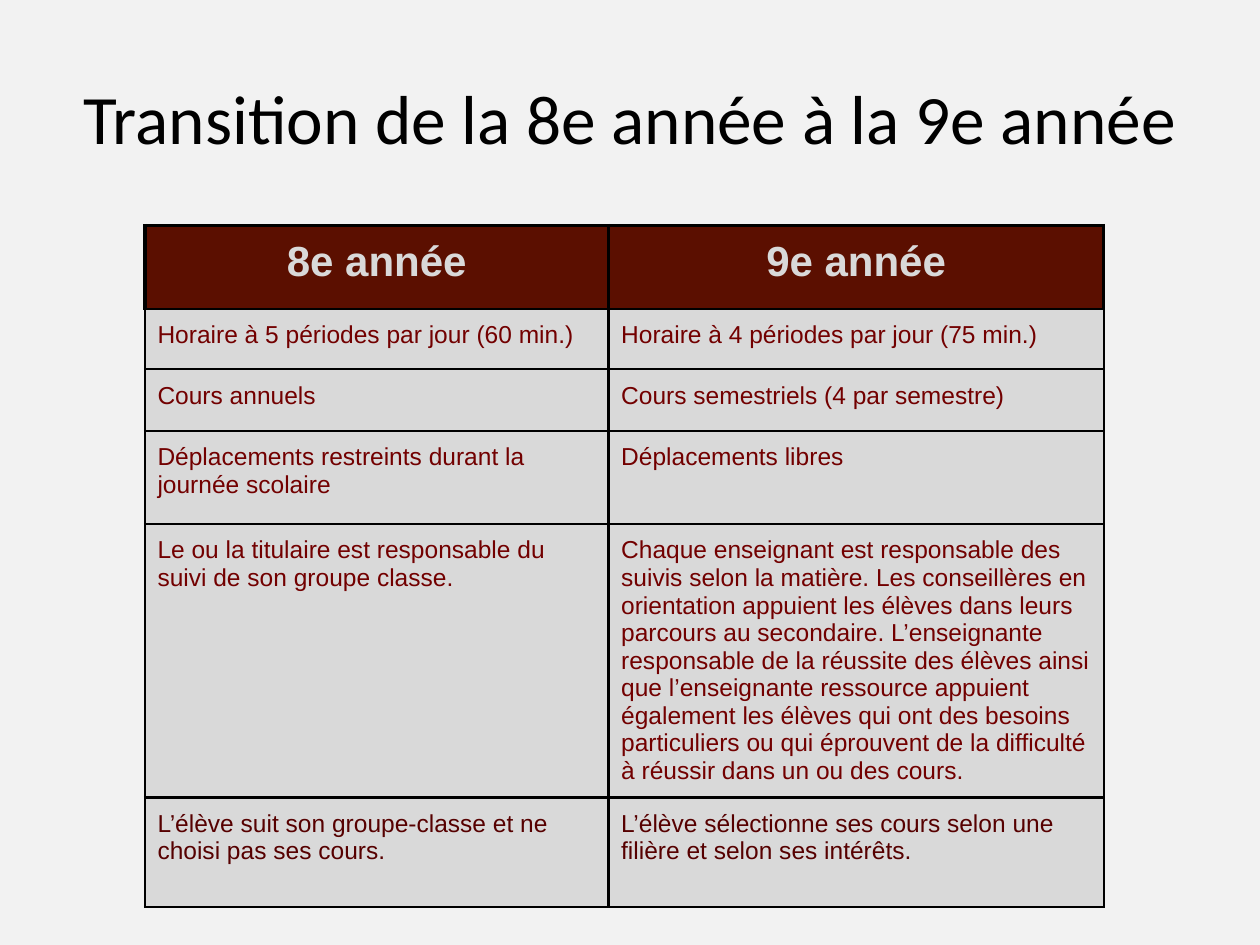
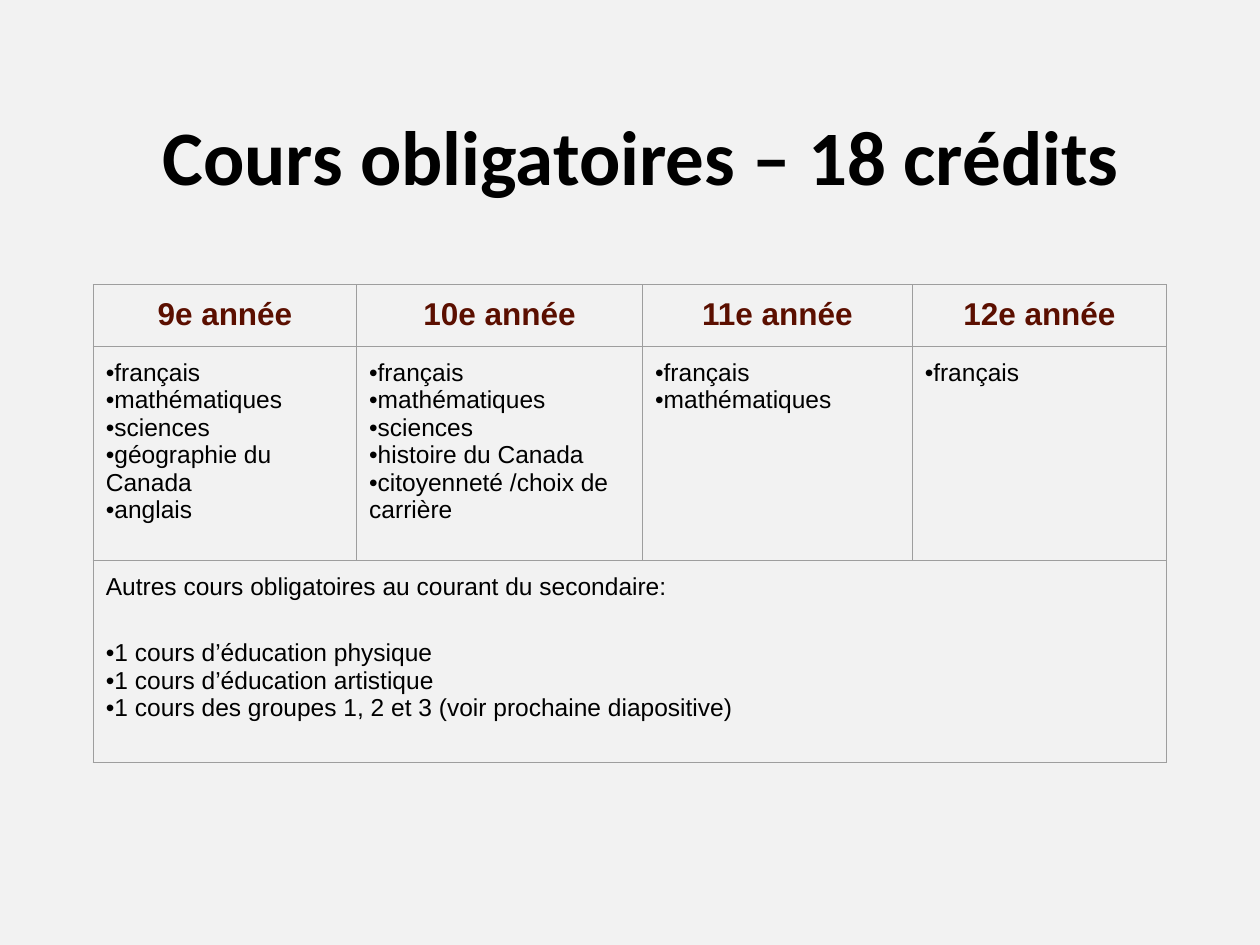
from lxml.etree import SubElement
from pptx import Presentation
from pptx.dml.color import RGBColor
from pptx.enum.text import MSO_ANCHOR, PP_ALIGN
from pptx.oxml.ns import qn
from pptx.util import Inches, Pt

BACKGROUND = RGBColor(0xF2, 0xF2, 0xF2)
BLACK = RGBColor(0, 0, 0)
GREY = RGBColor(0xD9, 0xD9, 0xD9)
BORDER_GREY = RGBColor(0x9E, 0x9E, 0x9E)
MAROON = RGBColor(0x5B, 0x0F, 0x00)
RED = RGBColor(0x72, 0, 0)
DARK_RED = RGBColor(0x56, 0, 0)
TITLE_FONT, TABLE_FONT = "Calibri", "Arial"

COMPARISON = [
    ("8e année", "9e année"),
    ("Horaire à 5 périodes par jour (60 min.)", "Horaire à 4 périodes par jour (75 min.)"),
    ("Cours annuels", "Cours semestriels (4 par semestre)"),
    ("Déplacements restreints durant la journée scolaire", "Déplacements libres"),
    ("Le ou la titulaire est responsable du suivi de son groupe classe.",
     "Chaque enseignant est responsable des suivis selon la matière. Les conseillères en "
     "orientation appuient les élèves dans leurs parcours au secondaire. L’enseignante "
     "responsable de la réussite des élèves ainsi que l’enseignante ressource appuient "
     "également les élèves qui ont des besoins particuliers ou qui éprouvent de la difficulté "
     "à réussir dans un ou des cours."),
    ("L’élève suit son groupe-classe et ne choisi pas ses cours.",
     "L’élève sélectionne ses cours selon une filière et selon ses intérêts."),
]
COURSES = {
    "9e année": ["français", "mathématiques", "sciences", "géographie du Canada", "anglais"],
    "10e année": ["français", "mathématiques", "sciences", "histoire du Canada",
                  "citoyenneté /choix de carrière"],
    "11e année": ["français", "mathématiques"],
    "12e année": ["français"],
}
OTHER_HEADING = "Autres cours obligatoires au courant du secondaire:"
OTHER_COURSES = [
    "1 cours d’éducation physique",
    "1 cours d’éducation artistique",
    "1 cours des groupes 1, 2 et 3 (voir prochaine diapositive)",
]


def add_run(paragraph, text, font_name, size, color, bold=False):
    run = paragraph.add_run()
    run.text = text
    run.font.name = font_name
    run.font.size = Pt(size)
    run.font.color.rgb = color
    run.font.bold = bold


def add_titled_slide(presentation, text, left, top, size, bold=False):
    slide = presentation.slides.add_slide(presentation.slide_layouts[5])
    title = slide.shapes.title
    title.left, title.top = Inches(left), Inches(top)
    title.width, title.height = Inches(9), Inches(1.25)
    title.text_frame.word_wrap = True
    title.text_frame.vertical_anchor = MSO_ANCHOR.MIDDLE
    paragraph = title.text_frame.paragraphs[0]
    paragraph.alignment = PP_ALIGN.CENTER
    add_run(paragraph, text, TITLE_FONT, size, BLACK, bold)
    return slide


def set_borders(cell, color, width):
    properties = cell._tc.get_or_add_tcPr()
    for index, side in enumerate("LRTB"):
        line = SubElement(properties, qn(f"a:ln{side}"), w=str(Pt(width)))
        fill = SubElement(line, qn("a:solidFill"))
        SubElement(fill, qn("a:srgbClr"), val=str(color))
        properties.insert(index, line)


def add_plain_table(slide, left, top, widths, heights, fill, border, border_width):
    frame = slide.shapes.add_table(len(heights), len(widths), Inches(left), Inches(top),
                                   Inches(sum(widths)), Inches(sum(heights)))
    table = frame.table
    table.first_row = table.horz_banding = False
    for column, width in zip(table.columns, widths):
        column.width = Inches(width)
    for row, height in zip(table.rows, heights):
        row.height = Inches(height)
    for cell in table.iter_cells():
        cell.margin_left = cell.margin_right = Inches(0.1)
        cell.margin_top = cell.margin_bottom = Inches(0.1)
        if fill is None:
            cell.fill.background()
        else:
            cell.fill.solid()
            cell.fill.fore_color.rgb = fill
        set_borders(cell, border, border_width)
    return table


def write_header(cell, text, size, color):
    paragraph = cell.text_frame.paragraphs[0]
    paragraph.alignment = PP_ALIGN.CENTER
    add_run(paragraph, text, TABLE_FONT, size, color, True)


def write_bullets(text_frame, items, first_paragraph):
    for index, item in enumerate(items):
        paragraph = text_frame.add_paragraph() if index else first_paragraph
        properties = paragraph._p.get_or_add_pPr()
        properties.set("marL", "0")
        properties.set("indent", "0")
        SubElement(properties, qn("a:buFont"), typeface=TABLE_FONT)
        SubElement(properties, qn("a:buChar"), char="•")
        add_run(paragraph, item, TABLE_FONT, 14, BLACK)


def add_comparison_table(slide, left, top):
    table = add_plain_table(slide, left, top, [3.68, 3.93],
                            [0.66, 0.48, 0.49, 0.74, 2.17, 0.87], GREY, BLACK, 1.5)
    last_row = len(COMPARISON) - 1
    for row, texts in enumerate(COMPARISON):
        for column, text in enumerate(texts):
            cell = table.cell(row, column)
            if row == 0:
                cell.fill.fore_color.rgb = MAROON
                for line in cell._tc.tcPr.findall("*")[:3]:
                    line.set("w", str(Pt(2.25)))
                write_header(cell, text, 24, GREY)
            else:
                paragraph = cell.text_frame.paragraphs[0]
                paragraph.space_before = Pt(6)
                color = DARK_RED if row == last_row else RED
                add_run(paragraph, text, TABLE_FONT, 14, color)


def add_course_table(slide, left, top):
    table = add_plain_table(slide, left, top, [2.09, 2.27, 2.14, 2.02],
                            [0.49, 1.7, 1.6], None, BORDER_GREY, 0.75)
    for column, (grade, courses) in enumerate(COURSES.items()):
        write_header(table.cell(0, column), grade, 18, MAROON)
        text_frame = table.cell(1, column).text_frame
        write_bullets(text_frame, courses, text_frame.paragraphs[0])
    other = table.cell(2, 0)
    other.merge(table.cell(2, len(COURSES) - 1))
    text_frame = other.text_frame
    add_run(text_frame.paragraphs[0], OTHER_HEADING, TABLE_FONT, 14, BLACK)
    first_course = text_frame.add_paragraph()
    first_course.space_before = Pt(22)
    write_bullets(text_frame, OTHER_COURSES, first_course)


def main():
    presentation = Presentation()
    presentation.slide_width, presentation.slide_height = Inches(10), Inches(7.5)
    background = presentation.slide_master.background.fill
    background.solid()
    background.fore_color.rgb = BACKGROUND

    transition = add_titled_slide(presentation, "Transition de la 8e année à la 9e année",
                                  0.5, 0.3, 39.6)
    add_comparison_table(transition, 1.15, 1.79)
    required = add_titled_slide(presentation, "Cours obligatoires – 18 crédits",
                                0.59, 0.6, 44, True)
    add_course_table(required, 0.74, 2.26)
    presentation.save("out.pptx")


if __name__ == "__main__":
    main()
